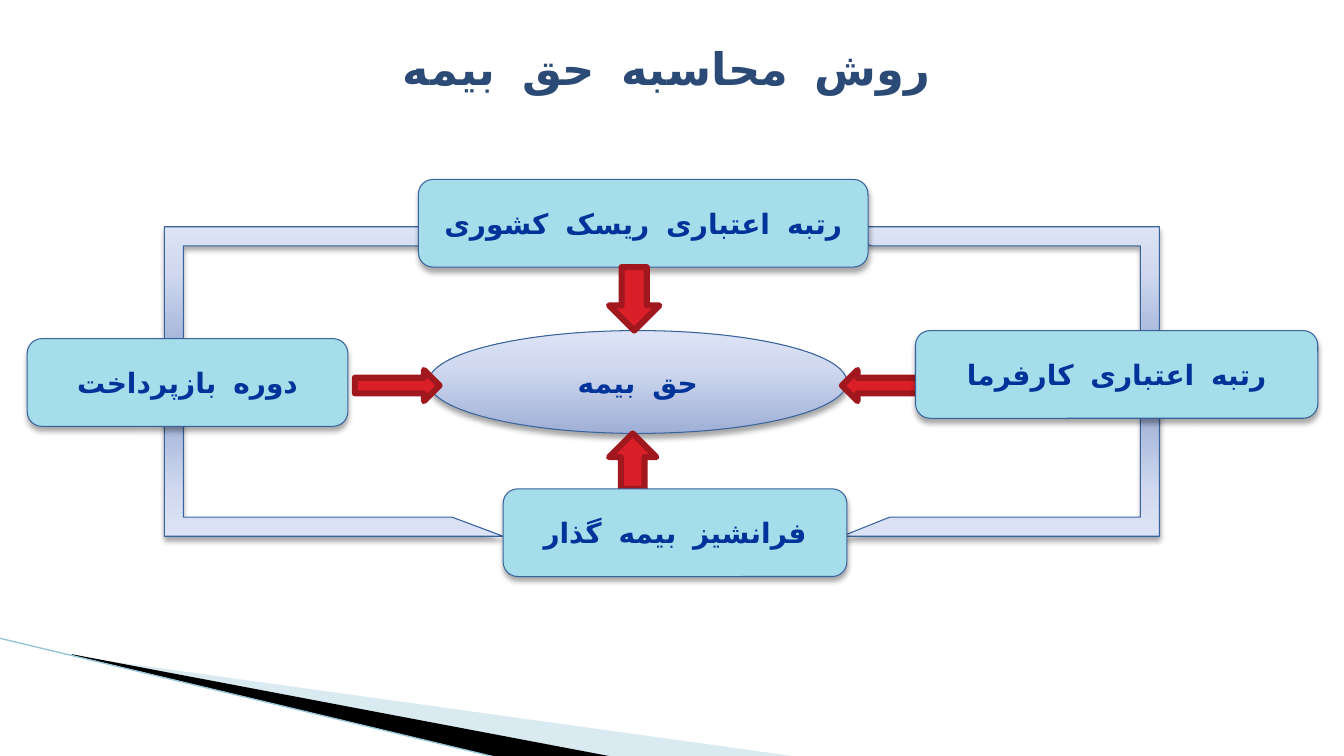
from dataclasses import dataclass

from lxml import etree
from pptx import Presentation
from pptx.dml.color import RGBColor
from pptx.enum.shapes import MSO_CONNECTOR, MSO_SHAPE
from pptx.enum.text import MSO_ANCHOR, PP_ALIGN
from pptx.oxml import parse_xml
from pptx.oxml.ns import nsdecls, qn
from pptx.util import Inches, Pt

HALF_FRAME = MSO_SHAPE.HALF_FRAME
ROUNDED = MSO_SHAPE.ROUNDED_RECTANGLE
ELLIPSE = MSO_SHAPE.OVAL
DOWN = MSO_SHAPE.DOWN_ARROW
UP = MSO_SHAPE.UP_ARROW
RIGHT = MSO_SHAPE.RIGHT_ARROW
STRAIGHT = MSO_CONNECTOR.STRAIGHT
CENTER = PP_ALIGN.CENTER
MIDDLE = MSO_ANCHOR.MIDDLE

COLORS = {
    "title": "2B4A76", "title_edge": "002060", "label": "003399",
    "factor": "A6DDEA", "edge": "39639D", "arrow": "DA1F28",
    "arrow_edge": "A1171E", "pale_wedge": "A0CBDC", "dark_wedge": "000000",
    "wedge_line": "97C5D8", "shadow": "000000",
}
GRADIENT = {0: "9FAFD6", 65: "D0D9EF", 100: "DCE3F6"}
FONT = "Noto Sans Mono"
TITLE_FORMAT = {"name": FONT, "size": Pt(32), "bold": True}
LABEL_FORMAT = {"name": FONT, "size": Pt(20), "bold": True}
FRAME_FORMAT = {"word_wrap": True, "vertical_anchor": MIDDLE}


@dataclass
class Part:
    kind: MSO_SHAPE
    left: float
    top: float
    width: float
    height: float
    label: str = ""
    rotation: int = 0
    flipped: bool = False


@dataclass
class Wedge:
    points: list[tuple[float, float]]
    color: str
    opacity: int = 100


WEDGES = [
    Wedge([(0.73, 6.51), (7.93, 7.51), (6.08, 7.51), (0.73, 6.5)], "pale_wedge", 40),
    Wedge([(0.71, 6.49), (6.09, 7.51), (4.96, 7.52), (0.72, 6.5)], "dark_wedge"),
]
BRACKETS = [
    Part(HALF_FRAME, 1.63, 4.06, 3.36, 1.26, rotation=180, flipped=True),
    Part(HALF_FRAME, 8.35, 4.06, 3.15, 1.26, rotation=180),
    Part(HALF_FRAME, 8.14, 2.25, 3.36, 1.26, flipped=True),
    Part(HALF_FRAME, 1.63, 2.25, 3.15, 1.26),
]
COUNTRY_RISK = Part(ROUNDED, 4.15, 1.78, 4.46, 0.87, "رتبه اعتباری ریسک کشوری")
PREMIUM = Part(ELLIPSE, 4.25, 3.28, 4.15, 1.02, "حق بیمه")
ARROWS = [
    Part(DOWN, 6.04, 2.65, 0.5, 0.63),
    Part(UP, 6.04, 4.3, 0.47, 0.55),
    Part(RIGHT, 3.52, 3.67, 0.84, 0.31),
    Part(RIGHT, 8.35, 3.67, 0.94, 0.31, rotation=180),
]
FACTORS = [
    Part(ROUNDED, 9.08, 3.28, 3.99, 0.87, "رتبه اعتباری کارفرما"),
    Part(ROUNDED, 4.99, 4.85, 3.41, 0.87, "فرانشیز بیمه گذار"),
    Part(ROUNDED, 0.27, 3.36, 3.18, 0.87, "دوره بازپرداخت"),
]


def rgb(name: str) -> RGBColor:
    return RGBColor.from_string(COLORS[name])


def apply_format(target, values: dict) -> None:
    for attribute, value in values.items():
        setattr(target, attribute, value)


def write_text(frame, text: str, font_format: dict, color: str):
    apply_format(frame, FRAME_FORMAT)
    paragraph = frame.paragraphs[0]
    paragraph.alignment = CENTER
    run = paragraph.add_run()
    run.text = text
    apply_format(run.font, font_format)
    run.font.color.rgb = rgb(color)
    properties = run.font._element
    properties.set("lang", "fa-IR")
    etree.SubElement(properties, qn("a:cs"), typeface=FONT)
    return paragraph, properties


def fill_gradient(shape) -> None:
    stops = "".join(
        f'<a:gs pos="{position * 1000}"><a:srgbClr val="{color}"/></a:gs>'
        for position, color in GRADIENT.items()
    )
    gradient = parse_xml(
        f'<a:gradFill {nsdecls("a")} rotWithShape="1"><a:gsLst>{stops}</a:gsLst>'
        '<a:lin ang="16200000" scaled="0"/></a:gradFill>'
    )
    shape.element.spPr.find(qn("a:prstGeom")).addnext(gradient)


def cast_shadow(shape) -> None:
    shape.element.spPr.find(qn("a:effectLst")).append(parse_xml(
        f'<a:outerShdw {nsdecls("a")} blurRad="{Pt(4)}" dist="{Pt(3)}" dir="5400000" '
        f'rotWithShape="0"><a:srgbClr val="{COLORS["shadow"]}">'
        '<a:alpha val="35000"/></a:srgbClr></a:outerShdw>'
    ))


def draw_part(slide, part: Part, edge: str, weight: float, fill: str = ""):
    box = map(Inches, (part.left, part.top, part.width, part.height))
    shape = slide.shapes.add_shape(part.kind, *box)
    shape.rotation = part.rotation
    shape.shadow.inherit = False
    if part.flipped:
        shape.element.spPr.find(qn("a:xfrm")).set("flipH", "1")
    if fill:
        shape.fill.solid()
        shape.fill.fore_color.rgb = rgb(fill)
    else:
        fill_gradient(shape)
    shape.line.color.rgb = rgb(edge)
    shape.line.width = Pt(weight)
    if part.label:
        write_text(shape.text_frame, part.label, LABEL_FORMAT, "label")
    return shape


def draw_raised(slide, part: Part, fill: str = ""):
    shape = draw_part(slide, part, "edge", 0.75, fill)
    cast_shadow(shape)
    return shape


def draw_wedge(slide, wedge: Wedge) -> None:
    points = [(Inches(x), Inches(y)) for x, y in wedge.points]
    builder = slide.shapes.build_freeform(*points[0])
    builder.add_line_segments(points[1:])
    shape = builder.convert_to_shape()
    shape.shadow.inherit = False
    shape.fill.solid()
    shape.fill.fore_color.rgb = rgb(wedge.color)
    shape.line.fill.background()
    if wedge.opacity < 100:
        tint = shape.element.spPr.find(qn("a:solidFill"))[0]
        etree.SubElement(tint, qn("a:alpha"), val=str(wedge.opacity * 1000))


def draw_wedge_line(slide) -> None:
    ends = map(Inches, (-0.01, 6.33, 4.95, 7.52))
    border = slide.shapes.add_connector(STRAIGHT, *ends)
    border.line.color.rgb = rgb("wedge_line")
    border.line.width = Pt(0.95)
    etree.SubElement(border.element.spPr, qn("a:effectLst"))


def write_title(slide) -> None:
    title = slide.shapes.title
    apply_format(title, {"left": Inches(1), "top": Inches(0.29),
                         "width": Inches(11.23), "height": Inches(0.77)})
    paragraph, properties = write_text(
        title.text_frame, "روش محاسبه حق بیمه", TITLE_FORMAT, "title")
    paragraph._p.get_or_add_pPr().set("rtl", "1")
    properties.insert(0, parse_xml(
        f'<a:ln {nsdecls("a")} w="{Pt(0.75)}"><a:solidFill>'
        f'<a:srgbClr val="{COLORS["title_edge"]}"/></a:solidFill></a:ln>'
    ))


def main() -> None:
    deck = Presentation()
    apply_format(deck, {"slide_width": Inches(13.33), "slide_height": Inches(7.5)})
    slide = deck.slides.add_slide(deck.slide_layouts[5])
    for wedge in WEDGES:
        draw_wedge(slide, wedge)
    draw_wedge_line(slide)
    for bracket in BRACKETS:
        frame = draw_raised(slide, bracket)
        frame.adjustments[0] = frame.adjustments[1] = 0.15
    write_title(slide)
    draw_raised(slide, COUNTRY_RISK, "factor")
    draw_raised(slide, PREMIUM)
    for arrow in ARROWS:
        draw_part(slide, arrow, "arrow_edge", 4.33, "arrow")
    for factor in FACTORS:
        draw_raised(slide, factor, "factor")
    deck.save("out.pptx")


if __name__ == "__main__":
    main()
